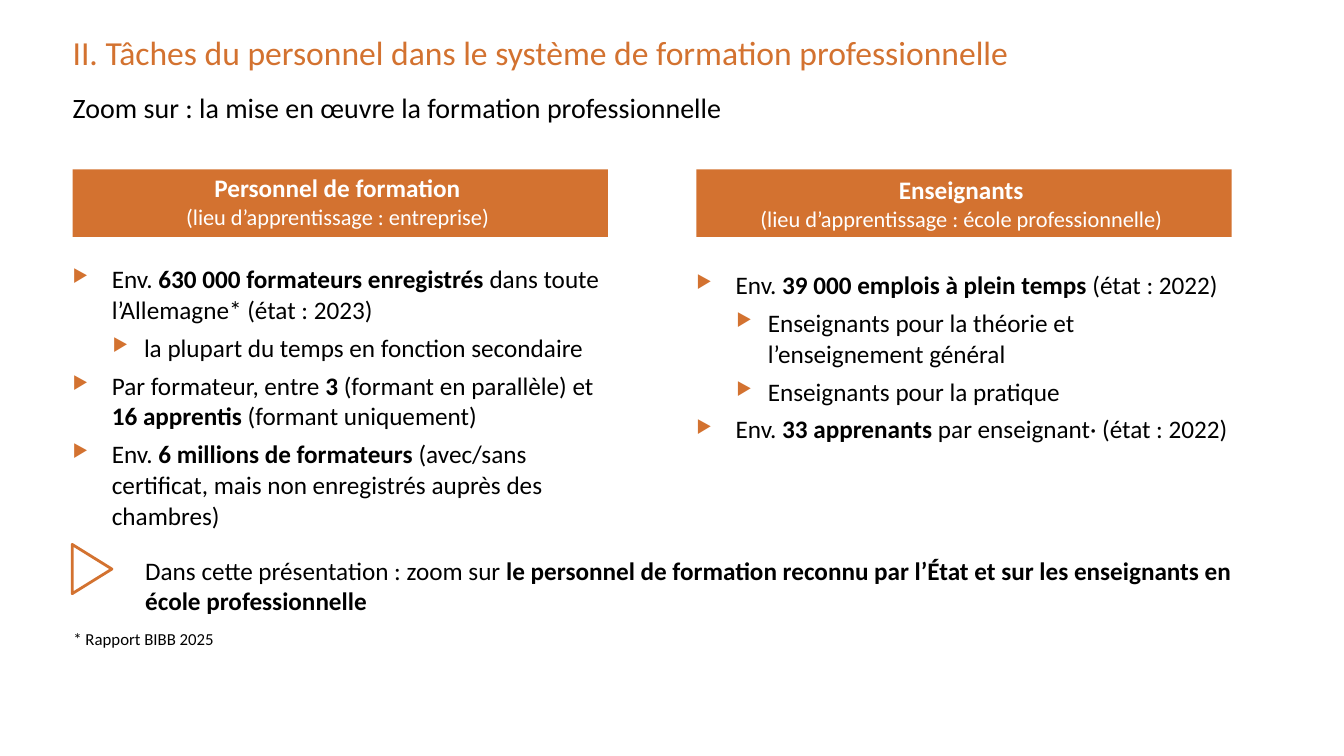
from dataclasses import dataclass

from lxml import etree
from pptx import Presentation, util as u
from pptx.dml.color import RGBColor
from pptx.enum import shapes, text
from pptx.oxml import ns

# Content: "|" switches bold on and off
TITLE = "II. Tâches du personnel dans le système de formation professionnelle"
SUBTITLE = "Zoom sur : la mise en œuvre la formation professionnelle"
COLUMNS = [
    {
        "head": "Personnel de formation ",
        "place": "(lieu d’apprentissage : entreprise) ",
        "head_spacing": 0.9,
        "list_box": (6.63, 13.69, 6.96),  # top, width, height
        "items": [
            (0, "Env. |630 000 formateurs enregistrés| dans toute l’Allemagne* (état : 2023)"),
            (1, "la plupart du temps en fonction secondaire"),
            (0, "Par formateur, entre |3| (formant en parallèle) et |16 apprentis |(formant uniquement)"),
            (0, "Env. |6 millions de formateurs |(avec/sans certificat, mais non enregistrés "
                "auprès des chambres)"),
        ],
    },
    {
        "head": "Enseignants ",
        "place": "(lieu d’apprentissage : école professionnelle) ",
        "head_spacing": 1.0,
        "list_box": (6.78, 13.49, 4.42),
        "items": [
            (0, "Env. |39 000 emplois à plein temps| (état : 2022)"),
            (1, "Enseignants pour la théorie et l’enseignement général"),
            (1, "Enseignants pour la pratique"),
            (0, "Env. |33 apprenants |par enseignant· (état : 2022)"),
        ],
    },
]
CALLOUT = ("Dans cette présentation : zoom sur |le personnel de formation reconnu par l’État "
           "et sur les enseignants en école professionnelle")
FOOTNOTE = "* Rapport BIBB 2025"


@dataclass(frozen=True)
class Theme:
    font: str = "Calibri"
    accent: str = "D37230"
    ink: str = "000000"
    paper: str = "FFFFFF"
    title: int = 24
    subtitle: int = 20
    body: int = 18
    place: int = 16
    note: int = 12


T = Theme()

# Layout in centimetres
LEFT = 1.83
COLUMN_STEP = 15.72
HEAD_TOP, HEAD_W, HEAD_H = 4.27, 13.49, 1.7
INDENTS = [(0.99, 0.99), (1.8, 0.79)]  # text start, hanging part per level


def box_at(*lengths):
    return [u.Cm(n) for n in lengths]


def rich(p, marked, size, color=T.ink, bold=False):
    for i, part in enumerate(marked.split("|")):
        r = p.add_run()
        r.text = part
        r.font.name = T.font
        r.font.size = u.Pt(size)
        r.font.bold = bold or i % 2 == 1
        r.font.color.rgb = RGBColor.from_string(color)


def frame(sp, anchor=text.MSO_ANCHOR.TOP):
    tf = sp.text_frame
    tf.auto_size = text.MSO_AUTO_SIZE.NONE
    tf.word_wrap = True
    tf.vertical_anchor = anchor
    tf.margin_left = tf.margin_right = tf.margin_top = tf.margin_bottom = 0
    return tf


def text_box(s, box, marked=None, size=T.body):
    tf = frame(s.shapes.add_textbox(*box_at(*box)))
    if marked:
        rich(tf.paragraphs[0], marked, size)
    return tf


def bullet(p, level):
    start, hang = INDENTS[level]
    p.level = level
    pPr = p._p.get_or_add_pPr()
    pPr.set("marL", str(u.Cm(start)))
    pPr.set("indent", str(-u.Cm(hang)))
    color = etree.SubElement(pPr, ns.qn("a:buClr"))
    etree.SubElement(color, ns.qn("a:srgbClr"), val=T.accent)
    etree.SubElement(pPr, ns.qn("a:buSzPct"), val="70000")
    etree.SubElement(pPr, ns.qn("a:buChar"), char="▶")


def add_header(s, left, column):
    sp = s.shapes.add_shape(shapes.MSO_SHAPE.RECTANGLE, *box_at(left, HEAD_TOP, HEAD_W, HEAD_H))
    sp.shadow.inherit = False
    sp.fill.solid()
    sp.fill.fore_color.rgb = RGBColor.from_string(T.accent)
    sp.line.fill.background()
    tf = frame(sp, text.MSO_ANCHOR.MIDDLE)
    head, place = tf.paragraphs[0], tf.add_paragraph()
    head.alignment = place.alignment = text.PP_ALIGN.CENTER
    head.line_spacing = column["head_spacing"]
    rich(head, column["head"], T.body, T.paper, bold=True)
    rich(place, column["place"], T.place, T.paper)


def add_list(s, left, column):
    top, width, height = column["list_box"]
    tf = text_box(s, (left, top, width, height))
    for i, (level, marked) in enumerate(column["items"]):
        p = tf.add_paragraph() if i else tf.paragraphs[0]
        bullet(p, level)
        p.line_spacing = u.Pt(22)
        p.space_before = u.Pt(5 if i else 0)
        rich(p, marked, T.body)


def main():
    prs = Presentation()
    prs.slide_width, prs.slide_height = box_at(33.87, 19.05)
    s = prs.slides.add_slide(prs.slide_layouts[5])

    # Title and subtitle
    title = s.shapes.title
    title.left, title.top, title.width, title.height = box_at(LEFT, 0.81, 25, 1.24)
    p = frame(title).paragraphs[0]
    p.alignment = text.PP_ALIGN.LEFT
    rich(p, TITLE, T.title, T.accent)
    text_box(s, (LEFT, 2.29, 30.71, 1.22), SUBTITLE, T.subtitle)

    # Two columns
    for i, column in enumerate(COLUMNS):
        left = LEFT + i * COLUMN_STEP
        add_header(s, left, column)
        add_list(s, left, column)

    # Callout with its pointer
    text_box(s, (3.66, 14, 27.53, 0.58), CALLOUT)
    pointer = s.shapes.add_shape(shapes.MSO_SHAPE.ISOSCELES_TRIANGLE,
                                 *box_at(1.7, 13.84, 1.24, 1))
    pointer.rotation = 90
    pointer.shadow.inherit = False
    pointer.fill.background()
    pointer.line.color.rgb = RGBColor.from_string(T.accent)
    pointer.line.width = u.Pt(2)

    # Footnote
    text_box(s, (1.85, 15.85, 5.2, 0.5), FOOTNOTE, T.note)

    prs.save("out.pptx")


if __name__ == "__main__":
    main()
